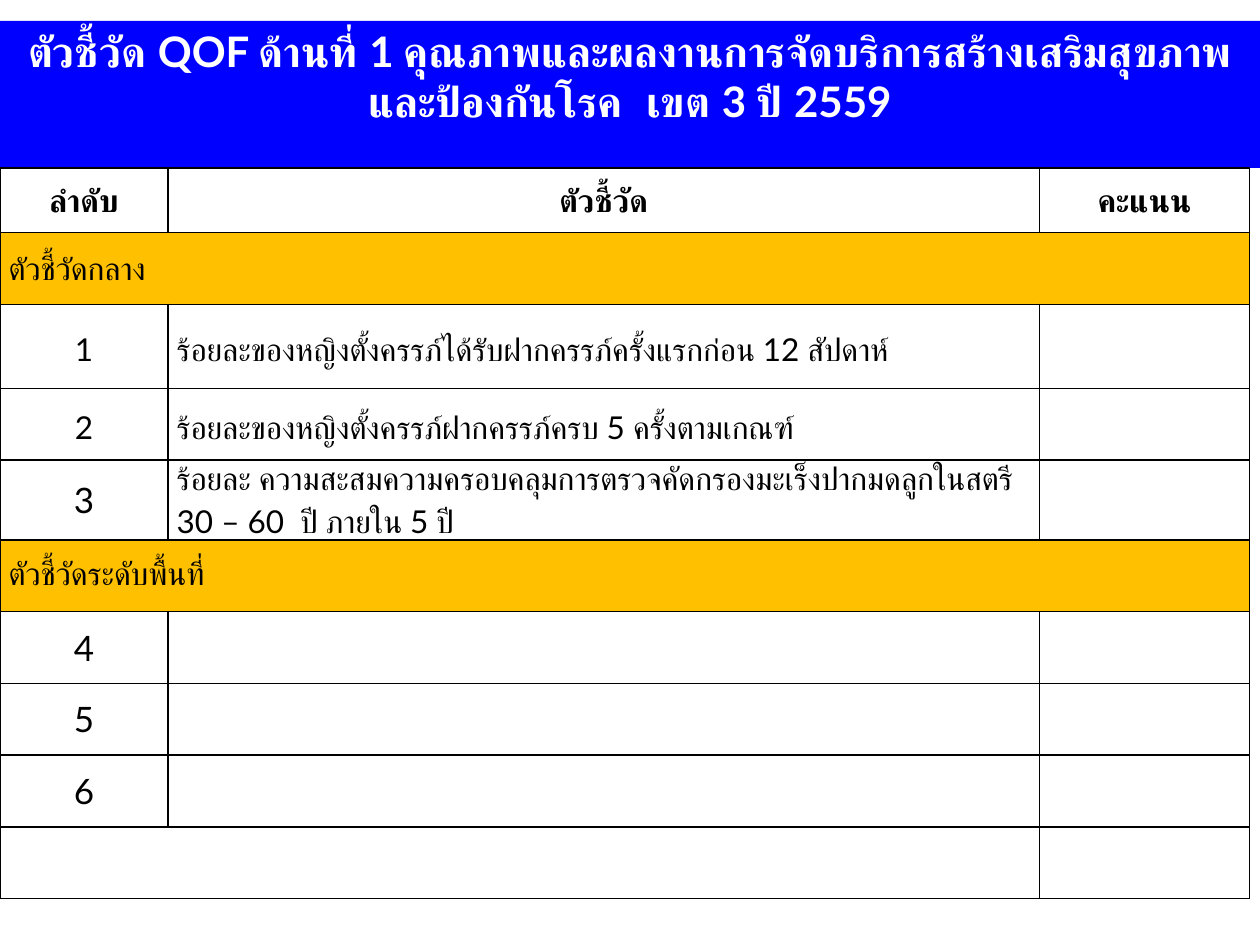
from pptx import Presentation
from pptx.util import Pt
from pptx.dml.color import RGBColor
from pptx.enum.text import PP_ALIGN as Al, MSO_ANCHOR as Anc, MSO_AUTO_SIZE as Fit
from pptx.oxml import parse_xml
from pptx.oxml.ns import nsdecls


def tint(code):
    return RGBColor.from_string(code)


def write(frame, text, size=18, color="000000", bold=False, align=Al.LEFT, space=1.0):
    para = frame.paragraphs[0]
    para.alignment = align
    para.line_spacing = space
    run = para.add_run()
    run.text = text
    font = run.font
    font.name = "Lato"
    font.size = Pt(size)
    font.bold = bold
    font.color.rgb = tint(color)


deck = Presentation()
deck.slide_width, deck.slide_height = Pt(720), Pt(540)
slide = deck.slides.add_slide(deck.slide_layouts[5])

title = slide.shapes.title
title.left, title.top, title.width, title.height = Pt(0), Pt(12), Pt(720), Pt(84)
title.fill.solid()
title.fill.fore_color.rgb = tint("0000FF")
frame = title.text_frame
frame.word_wrap = True
frame.auto_size = Fit.NONE
frame.vertical_anchor = Anc.TOP
frame.margin_top = Pt(2.5)
write(frame, "ตัวชี้วัด QOF ด้านที่ 1 คุณภาพและผลงานการจัดบริการสร้างเสริมสุขภาพและป้องกันโรค  เขต 3 ปี 2559",
      size=24, color="FFFFFF", bold=True, align=Al.CENTER)

rows = [
    ("ลำดับ", "ตัวชี้วัด", "คะแนน"),
    ("ตัวชี้วัดกลาง", "", ""),
    ("1", "ร้อยละของหญิงตั้งครรภ์ได้รับฝากครรภ์ครั้งแรกก่อน 12 สัปดาห์", ""),
    ("2", "ร้อยละของหญิงตั้งครรภ์ฝากครรภ์ครบ 5 ครั้งตามเกณฑ์", ""),
    ("3", "ร้อยละ ความสะสมความครอบคลุมการตรวจคัดกรองมะเร็งปากมดลูกในสตรี 30 – 60  ปี ภายใน 5 ปี", ""),
    ("ตัวชี้วัดระดับพื้นที่", "", ""),
    ("4", "", ""),
    ("5", "", ""),
    ("6", "", ""),
    ("", "", ""),
]
bands = (1, 5)
widths = (96, 498, 120)
heights = [37, 41, 48] + [41] * 7

table = slide.shapes.add_table(len(rows), 3, Pt(0), Pt(96), Pt(sum(widths)), Pt(sum(heights))).table
table.first_row = table.horz_banding = False
for col, width in zip(table.columns, widths):
    col.width = Pt(width)
for row, height in zip(table.rows, heights):
    row.height = Pt(height)

for r, texts in enumerate(rows):
    for c, text in enumerate(texts):
        cell = table.cell(r, c)
        cell.margin_left = cell.margin_right = Pt(5)
        cell.margin_top = cell.margin_bottom = Pt(0)
        cell.vertical_anchor = Anc.MIDDLE
        props = cell._tc.get_or_add_tcPr()
        for side in "LRTB":
            props.append(parse_xml(
                f'<a:ln{side} {nsdecls("a")} w="12700"><a:solidFill>'
                f'<a:srgbClr val="000000"/></a:solidFill></a:ln{side}>'))
        cell.fill.solid()
        cell.fill.fore_color.rgb = tint("FFC000" if r in bands else "FFFFFF")
        if text:
            mid = r == 0 or (c == 0 and r not in bands)
            late = c == 0 and r >= 4
            write(cell.text_frame, text, size=20 if late and mid else 18, bold=r == 0,
                  align=Al.CENTER if mid else Al.LEFT, space=1.0 if late else 1.15)

for r, last in ((1, 2), (5, 2), (9, 1)):
    table.cell(r, 0).merge(table.cell(r, last))

deck.save("out.pptx")
